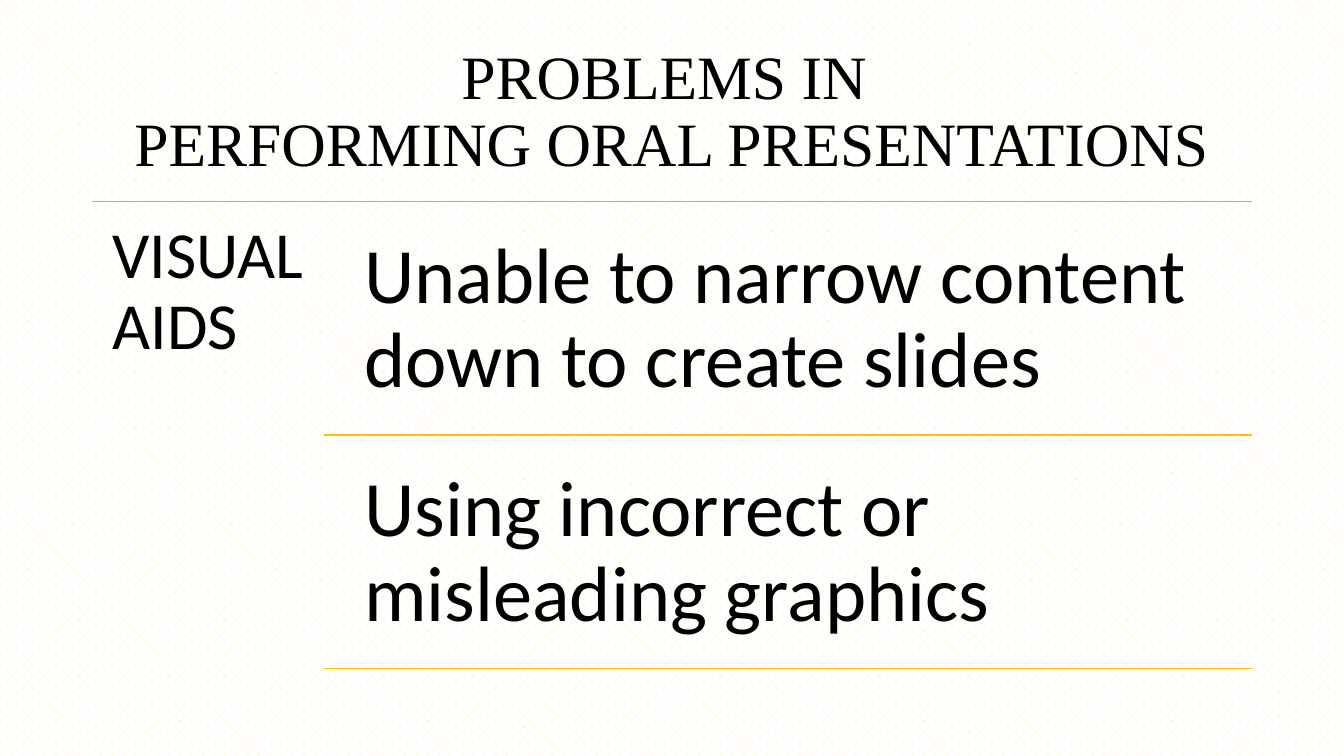
from pptx import Presentation
from pptx.dml.color import RGBColor
from pptx.enum.dml import MSO_PATTERN
from pptx.enum.shapes import MSO_CONNECTOR
from pptx.enum.text import MSO_ANCHOR, MSO_AUTO_SIZE, PP_ALIGN
from pptx.oxml.ns import qn
from pptx.util import Cm, Pt

STRAIGHT = MSO_CONNECTOR.STRAIGHT
DOTS = MSO_PATTERN.PERCENT_25
TOP, MIDDLE = MSO_ANCHOR.TOP, MSO_ANCHOR.MIDDLE
LEFT, CENTER = PP_ALIGN.LEFT, PP_ALIGN.CENTER
NO_FIT = MSO_AUTO_SIZE.NONE

TITLE_LINES = ["PROBLEMS IN ", "PERFORMING ORAL PRESENTATIONS"]
TOPIC = "VISUAL AIDS"
PROBLEMS = [
    "Unable to narrow content down to create slides",
    "Using incorrect or misleading graphics",
]


def color(value):
    return RGBColor.from_string(value)


def write_text(shape, lines, size, font, inset, anchor=TOP, align=LEFT):
    frame = shape.text_frame
    frame.word_wrap = True
    frame.auto_size = NO_FIT
    frame.vertical_anchor = anchor
    frame.margin_left = frame.margin_right = Cm(inset[0])
    frame.margin_top = frame.margin_bottom = Cm(inset[1])
    paragraph = frame.paragraphs[0]
    paragraph.alignment = align
    paragraph.line_spacing = 0.9
    for index, line in enumerate(lines):
        if index:
            paragraph.add_line_break()
        run = paragraph.add_run()
        run.text = line
        run.font.size = Pt(size)
        run.font.name = font
        run.font.color.rgb = color("000000")


def add_text(slide, box, text, size, inset):
    shape = slide.shapes.add_textbox(*map(Cm, box))
    write_text(shape, [text], size, "Calibri", (inset, inset))


def add_rule(slide, left, right, top, line_color):
    rule = slide.shapes.add_connector(
        STRAIGHT, Cm(left), Cm(top), Cm(right), Cm(top))
    rule.line.color.rgb = color(line_color)
    rule.line.width = Pt(1)
    properties = rule._element.spPr
    properties.append(properties.makeelement(qn("a:effectLst"), {}))


def add_background(slide):
    fill = slide.background.fill
    fill.patterned()
    fill.pattern = DOTS
    fill.fore_color.rgb = color("FFF2CC")
    fill.back_color.rgb = color("FFFFFF")


def add_title(slide, box):
    title = slide.shapes.title
    title.left, title.top, title.width, title.height = map(Cm, box)
    write_text(title, TITLE_LINES, 44, "Times New Roman", (0.25, 0.13),
               MIDDLE, CENTER)


def add_topic_list(slide, box):
    left, top, width, height = box
    right = left + width
    topic_width = width / 5
    gap, indent = 0.28, 0.43
    row_height = 5.61

    # Topic in the left column, below the full-width rule
    add_rule(slide, left, right, top, "E7AE00")
    add_text(slide, (left, top, topic_width, height), TOPIC, 47, 0.51)

    # One problem per row, each closed by a rule
    column_left = left + topic_width
    text_left = column_left + indent
    for index, problem in enumerate(PROBLEMS):
        row_top = top + gap + index * (row_height + gap)
        add_text(slide, (text_left, row_top, right - text_left, row_height),
                 problem, 56, 0.58)
        add_rule(slide, column_left, right, row_top + row_height, "FFC000")


def main():
    presentation = Presentation()
    presentation.slide_width = Cm(33.87)
    presentation.slide_height = Cm(19.05)
    slide = presentation.slides.add_slide(presentation.slide_layouts[5])
    add_background(slide)
    add_title(slide, (2.33, 1.01, 29.21, 3.68))
    add_topic_list(slide, (2.33, 5.07, 29.21, 12.09))
    presentation.save("out.pptx")


if __name__ == "__main__":
    main()
